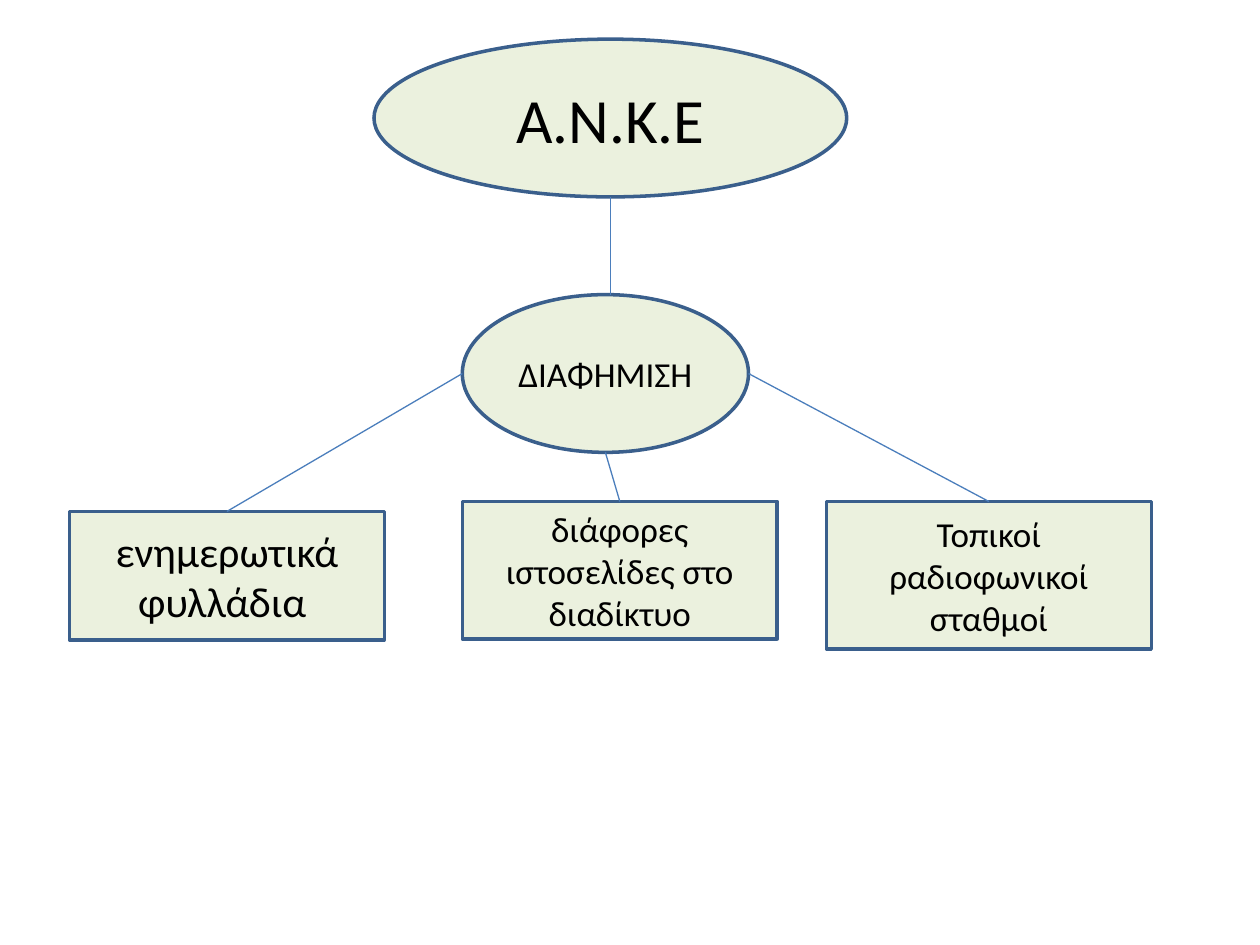
from lxml.etree import SubElement
from pptx import Presentation
from pptx.dml.color import RGBColor
from pptx.enum.shapes import MSO_CONNECTOR, MSO_SHAPE
from pptx.enum.text import MSO_ANCHOR, PP_ALIGN
from pptx.oxml.ns import qn
from pptx.util import Cm, Pt

PALE = RGBColor(0xEB, 0xF1, 0xDE)
EDGE = RGBColor(0x3A, 0x5F, 0x8C)
LINK = RGBColor(0x4B, 0x7E, 0xBC)
BLACK = RGBColor(0, 0, 0)

# text, size, left, top, width, height (cm)
LEAVES = [
    ("ενημερωτικά φυλλάδια ", 24, 1.4, 10.31, 6.35, 2.59),
    ("διάφορες ιστοσελίδες στο διαδίκτυο", 20, 9.32, 10.11, 6.35, 2.77),
    ("Τοπικοί ραδιοφωνικοί σταθμοί", 20, 16.66, 10.11, 6.55, 2.97),
]


def put_text(shape, text, size=20, color=BLACK, font="Calibri",
             align=PP_ALIGN.CENTER, anchor=MSO_ANCHOR.MIDDLE):
    frame = shape.text_frame
    frame.word_wrap = True
    frame.vertical_anchor = anchor
    para = frame.paragraphs[0]
    para.alignment = align
    run = para.add_run()
    run.text = text
    run.font.size = Pt(size)
    run.font.name = font
    run.font.color.rgb = color


def add_node(slide, kind, text, size, *box):
    node = slide.shapes.add_shape(kind, *map(Cm, box))
    node.shadow.inherit = False
    node.fill.solid()
    node.fill.fore_color.rgb = PALE
    node.line.color.rgb = EDGE
    node.line.width = Pt(2)
    put_text(node, text, size=size)
    return node


def side(node, name):
    """Return the midpoint of one side of a node."""
    mid_x = node.left + node.width // 2
    mid_y = node.top + node.height // 2
    return {
        "top": (mid_x, node.top),
        "bottom": (mid_x, node.top + node.height),
        "left": (node.left, mid_y),
        "right": (node.left + node.width, mid_y),
    }[name]


def add_link(slide, start, end):
    link = slide.shapes.add_connector(MSO_CONNECTOR.STRAIGHT, *start, *end)
    link.line.color.rgb = LINK
    link.line.width = Pt(0.75)
    SubElement(link._element.spPr, qn("a:effectLst"))


def main():
    deck = Presentation()
    deck.slide_width, deck.slide_height = Cm(25.4), Cm(19.05)
    slide = deck.slides.add_slide(deck.slide_layouts[6])

    root = add_node(slide, MSO_SHAPE.OVAL, "Α.Ν.Κ.Ε", 36,
                    7.54, 0.79, 9.53, 3.18)
    hub = add_node(slide, MSO_SHAPE.OVAL, "ΔΙΑΦΗΜΙΣΗ", 20,
                   9.32, 5.94, 5.77, 3.18)
    stem = side(root, "bottom")
    add_link(slide, stem, (stem[0], hub.top))

    for leaf, exit_side in zip(LEAVES, ("left", "bottom", "right")):
        node = add_node(slide, MSO_SHAPE.RECTANGLE, *leaf)
        add_link(slide, side(hub, exit_side), side(node, "top"))

    deck.save("out.pptx")


if __name__ == "__main__":
    main()
